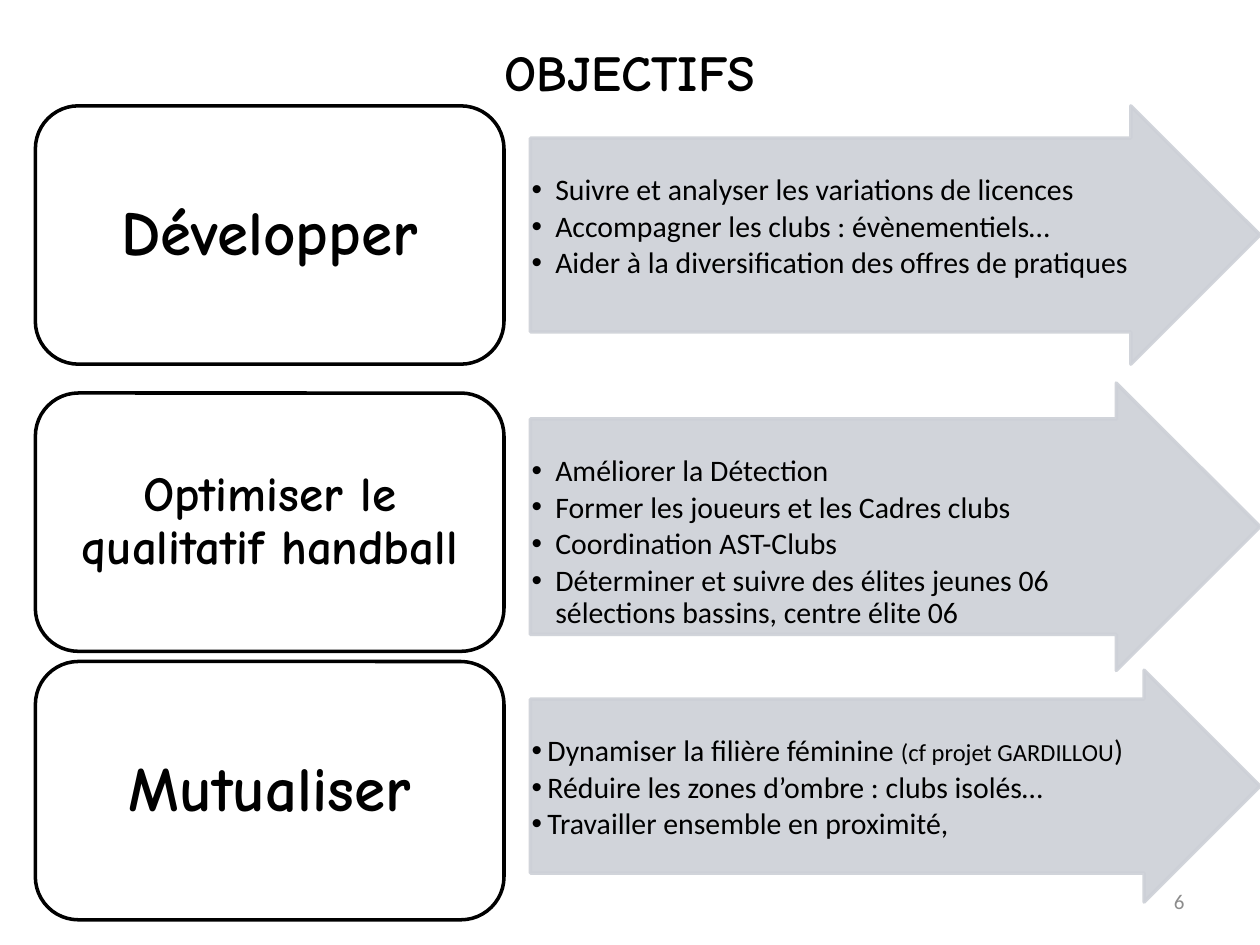
from pptx import Presentation
from pptx.dml.color import RGBColor
from pptx.enum.shapes import MSO_SHAPE as Shape
from pptx.enum.text import MSO_ANCHOR as Anchor, PP_ALIGN as Align
from pptx.oxml.ns import qn
from pptx.util import Pt
from lxml.etree import SubElement


def rgb(code):
    return RGBColor.from_string(code)


def add_run(p, text, font="Calibri", size=17, color="000000", bold=False):
    r = p.add_run()
    r.text = text
    r.font.name, r.font.size, r.font.bold = font, Pt(size), bold
    r.font.color.rgb = rgb(color)


def set_alpha(fill, percent):
    color = fill._xPr.find(qn("a:solidFill"))[0]
    SubElement(color, qn("a:alpha")).set("val", str(percent * 1000))


class Deck:
    heading = "Comic Neue"
    arrow_color = "CDD0D7"

    def __init__(self, width, height):
        self.prs = Presentation()
        self.prs.slide_width, self.prs.slide_height = Pt(width), Pt(height)
        self.s = self.prs.slides.add_slide(self.prs.slide_layouts[6])

    def frame(self, sp, anchor, margins):
        tf = sp.text_frame
        tf.word_wrap = True
        tf.vertical_anchor = anchor
        tf.margin_left, tf.margin_top, tf.margin_right, tf.margin_bottom = map(Pt, margins)
        return tf

    def text(self, box, text, align, **fmt):
        sp = self.s.shapes.add_textbox(*map(Pt, box))
        p = self.frame(sp, Anchor.MIDDLE, (7.2, 3.6, 7.2, 3.6)).paragraphs[0]
        p.alignment = align
        add_run(p, text, **fmt)

    def shape(self, kind, box, fill, line):
        sp = self.s.shapes.add_shape(kind, *map(Pt, box))
        sp.shadow.inherit = False
        sp.fill.solid()
        sp.fill.fore_color.rgb = rgb(fill)
        sp.line.width = Pt(2)
        sp.line.color.rgb = rgb(line)
        return sp

    def label(self, top, text, size):
        sp = self.shape(Shape.ROUNDED_RECTANGLE, (20.2, top, 267.8, 147.6), "FFFFFF", "000000")
        p = self.frame(sp, Anchor.MIDDLE, (10.8, 5, 10.8, 5)).paragraphs[0]
        p.alignment, p.line_spacing = Align.CENTER, 0.9
        add_run(p, text, font=self.heading, size=size, bold=True)

    def arrow(self, top, height, indent, items):
        sp = self.shape(Shape.RIGHT_ARROW, (303.1, top, 416.9, height),
                        self.arrow_color, self.arrow_color)
        sp.adjustments[0], sp.adjustments[1] = 0.75, 0.5
        for fill in (sp.fill, sp.line.fill):
            set_alpha(fill, 90)
        tf = self.frame(sp, Anchor.TOP, (0.7, 21, 0.7, 0.7))
        for i, item in enumerate(items):
            p = tf.paragraphs[0] if i == 0 else tf.add_paragraph()
            self.bullet(p, indent)
            for text, size in item:
                add_run(p, text, size=size)

    def bullet(self, p, indent):
        p.alignment, p.line_spacing, p.space_after = Align.LEFT, 0.9, Pt(2.55)
        pPr = p._p.get_or_add_pPr()
        pPr.set("marL", str(Pt(indent)))
        pPr.set("indent", str(-Pt(indent)))
        SubElement(pPr, qn("a:buFont")).set("typeface", "Arial")
        SubElement(pPr, qn("a:buChar")).set("char", "•")


def main():
    deck = Deck(720, 540)
    deck.text((36, 21.6, 648, 38.9), "OBJECTIFS", Align.CENTER,
              font=deck.heading, size=28.8, bold=True)

    goals = [
        ("Développer", 36, 60.5, 60.5, 147.6, 13.5, [
            [("Suivre et analyser les variations de licences", 17)],
            [("Accompagner les clubs : évènementiels…", 17)],
            [("Aider à la diversification des offres de pratiques", 17)]]),
        ("Optimiser le qualitatif handball", 28, 224.6, 218.9, 164.2, 13.5, [
            [("Améliorer la Détection", 17)],
            [("Former les joueurs et les Cadres clubs", 17)],
            [("Coordination AST-Clubs", 17)],
            [("Déterminer et suivre des élites jeunes 06 sélections bassins, centre élite 06", 17)]]),
        ("Mutualiser", 36, 378, 383, 132.5, 9, [
            [("Dynamiser la filière féminine ", 17), ("(cf projet GARDILLOU", 14), (")", 17)],
            [("Réduire les zones d’ombre : clubs isolés…", 17)],
            [("Travailler ensemble en proximité,", 17)]]),
    ]
    for name, size, label_top, arrow_top, height, indent, items in goals:
        deck.arrow(arrow_top, height, indent, items)
        deck.label(label_top, name, size)

    deck.text((516.2, 500.4, 167.8, 28.8), "6", Align.RIGHT, size=12, color="8C8C8C")
    deck.prs.save("out.pptx")


if __name__ == "__main__":
    main()
